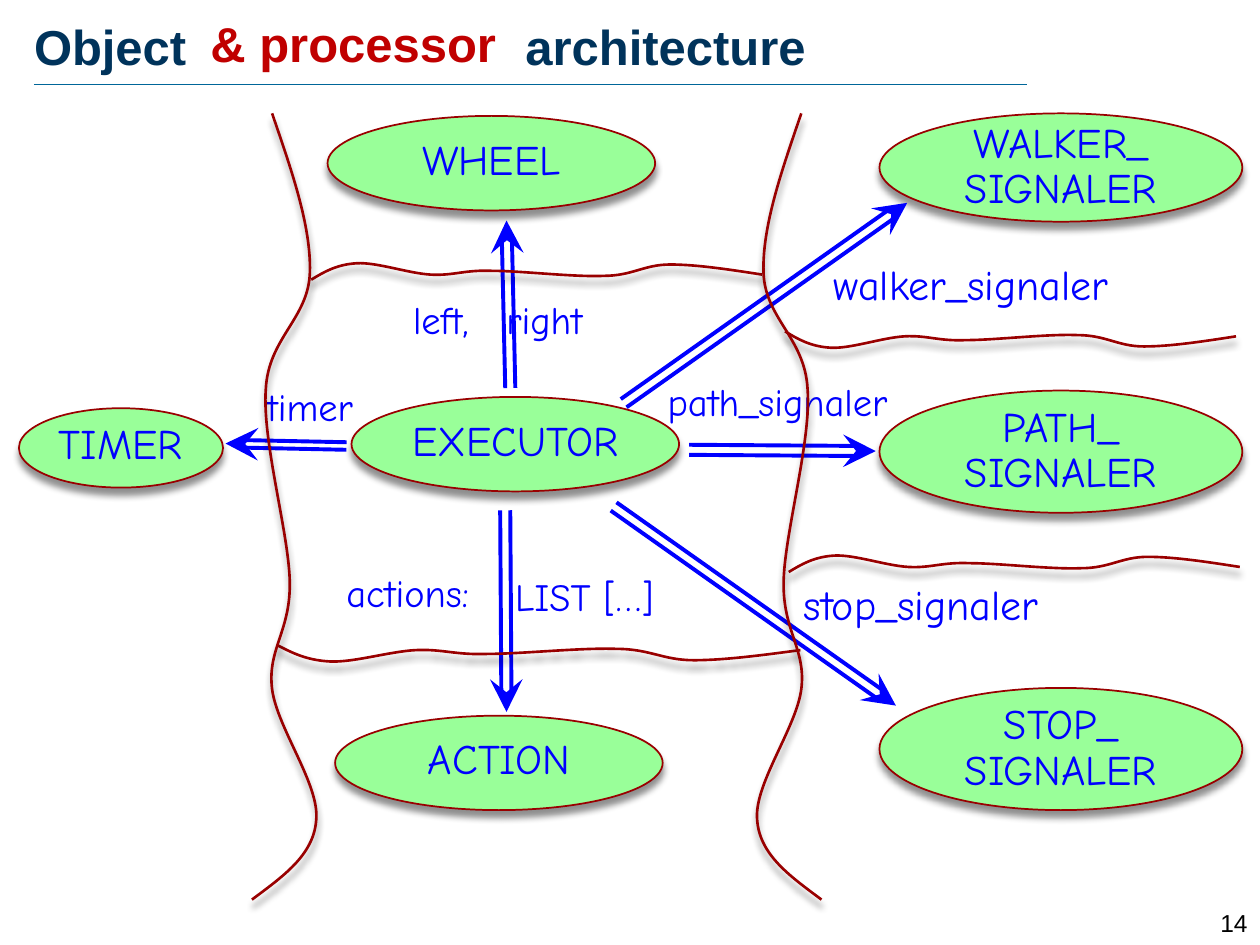
import math
from dataclasses import dataclass

import pptx
import pptx.dml.color
import pptx.enum.shapes
import pptx.enum.text
import pptx.oxml
import pptx.oxml.ns
import pptx.util
from pptx.util import Inches

BLUE, NAVY, RED = "0000FF", "00335B", "C00000"
GREEN, MAROON, BLACK = "99FF99", "990000", "000000"
HAND, SANS = "Comic Neue", "Arial"
NAMESPACE = 'xmlns:a="http://schemas.openxmlformats.org/drawingml/2006/main"'
ALIGN = pptx.enum.text.PP_ALIGN
ANCHOR = pptx.enum.text.MSO_ANCHOR
Point = tuple[float, float]


@dataclass
class Node:
    name: str
    left: float
    top: float
    width: float = 2.6
    height: float = 0.75
    spacing: float = 0.8


@dataclass
class Label:
    text: str
    left: float
    top: float
    width: float
    size: int = 22
    tab: float = 0


@dataclass
class Arrow:
    start: Point
    tip: Point
    half_gap: float = 0.04


NODES = [
    Node("EXECUTOR", 2.79, 3.15),
    Node("WHEEL", 2.6, 0.92),
    Node("ACTION", 2.66, 5.68),
    Node("TIMER", 0.15, 3.24, 1.62, 0.63),
    Node("WALKER_\nSIGNALER", 6.98, 0.9, 2.88, 0.86, 0.9),
    Node("PATH_\nSIGNALER", 6.98, 3.1, 2.88, 0.97, 0.9),
    Node("STOP_\nSIGNALER", 6.98, 5.46, 2.88, 0.97, 0.9),
]
ARROWS = [
    Arrow((4.95, 3.2), (7.2, 1.61)),
    Arrow((5.47, 3.57), (6.95, 3.58)),
    Arrow((4.87, 4.02), (7.11, 5.6)),
    Arrow((4.05, 3.08), (4.02, 1.75)),
    Arrow((4.01, 4.05), (4.02, 5.65)),
    Arrow((2.75, 3.54), (1.79, 3.52), 0.03),
]
LABELS = [
    Label("path_signaler", 5.2, 2.95, 2.33),
    Label("stop_signaler", 6.28, 4.54, 2.33, 24),
    Label("walker_signaler", 6.52, 2, 2.76, 24),
    Label("left,\tright", 3.18, 2.3, 2.28, tab=0.74),
    Label("LIST […]", 3.99, 4.5, 1.61),
    Label("actions:", 2.65, 4.47, 1.61),
    Label("timer", 2.02, 2.99, 1.03),
]
# Processor boundaries: a start point, then three Bezier points per segment
WAVE = [(0, 0), (0.1, 0.06), (0.2, 0.12), (0.36, 0.13), (0.52, 0.14), (0.77, 0.05),
        (0.95, 0.04), (1.13, 0.03), (1.22, 0.08), (1.44, 0.07), (1.67, 0.07),
        (2.08, 0.02), (2.32, 0.03), (2.55, 0.03), (2.64, 0.12), (2.85, 0.12),
        (3.06, 0.12), (3.32, 0.08), (3.58, 0.04)]
SIDE = [(6.52, 7.14), (6.28, 6.96), (6.03, 6.79), (6.01, 6.51), (5.98, 6.23),
        (6.32, 5.78), (6.36, 5.47), (6.4, 5.15), (6.21, 5.01), (6.22, 4.61),
        (6.23, 4.22), (6.44, 3.5), (6.41, 3.09), (6.39, 2.68), (6.07, 2.53),
        (6.06, 2.16), (6.05, 1.79), (6.21, 1.34), (6.36, 0.9)]
MIRROR_SUM = 8.52


def color(value: str) -> pptx.dml.color.RGBColor:
    return pptx.dml.color.RGBColor.from_string(value)


def set_line(shape, value: str, width: float) -> None:
    shape.line.color.rgb = color(value)
    shape.line.width = pptx.util.Pt(width)


def add_shadow(shape) -> None:
    shape.shadow.inherit = False
    effects = shape._element.spPr.find(pptx.oxml.ns.qn("a:effectLst"))
    effects.append(pptx.oxml.parse_xml(
        f'<a:outerShdw {NAMESPACE} blurRad="50800" dist="50800" dir="5400000">'
        '<a:srgbClr val="000000"><a:alpha val="43000"/></a:srgbClr></a:outerShdw>'))


def write(shape, text: str, size: int, value: str, name: str = HAND, bold: bool = False,
          align=ALIGN.LEFT, spacing: float = 1, tab: float = 0, **frame_format) -> None:
    frame = shape.text_frame
    for key, setting in {"word_wrap": True, **frame_format}.items():
        setattr(frame, key, setting)
    paragraph = frame.paragraphs[0]
    if tab:
        paragraph._p.get_or_add_pPr().append(pptx.oxml.parse_xml(
            f'<a:tabLst {NAMESPACE}><a:tab pos="{Inches(tab)}" algn="l"/></a:tabLst>'))
    paragraph.alignment, paragraph.line_spacing = align, spacing
    for index, line in enumerate(text.split("\n")):
        if index:
            paragraph.add_line_break()
        run = paragraph.add_run()
        run.text = line
        for key, setting in {"size": pptx.util.Pt(size), "name": name, "bold": bold}.items():
            setattr(run.font, key, setting)
        run.font.color.rgb = color(value)


def add_text(slide, left: float, top: float, width: float, height: float, *content, **format):
    box = slide.shapes.add_textbox(*map(Inches, (left, top, width, height)))
    write(box, *content, **format)


def add_node(slide, node: Node) -> None:
    shape = slide.shapes.add_shape(
        pptx.enum.shapes.MSO_SHAPE.OVAL,
        *map(Inches, (node.left, node.top, node.width, node.height)))
    shape.fill.solid()
    shape.fill.fore_color.rgb = color(GREEN)
    set_line(shape, MAROON, 1)
    add_shadow(shape)
    write(shape, node.name, 24, BLUE, align=ALIGN.CENTER, spacing=node.spacing,
          vertical_anchor=ANCHOR.MIDDLE, margin_left=0, margin_right=0)


def add_line(shapes, start: Point, end: Point, value: str, width: float, head: bool = False):
    connector = shapes.add_connector(
        pptx.enum.shapes.MSO_CONNECTOR.STRAIGHT, *map(Inches, (*start, *end)))
    set_line(connector, value, width)
    if head:
        connector.line._get_or_add_ln().append(pptx.oxml.parse_xml(
            f'<a:tailEnd {NAMESPACE} type="stealth" w="lg" len="lg"/>'))
    connector._element.spPr.append(pptx.oxml.parse_xml(f"<a:effectLst {NAMESPACE}/>"))


def add_arrow(slide, arrow: Arrow) -> None:
    """Draw two parallel shafts that run into one arrowhead."""
    (x, y), (tip_x, tip_y) = arrow.start, arrow.tip
    length = math.dist(arrow.start, arrow.tip)
    along_x, along_y = (tip_x - x) / length, (tip_y - y) / length
    shapes = slide.shapes.add_group_shape().shapes

    def place(distance: float, offset: float = 0) -> Point:
        return (x + along_x * distance - along_y * offset,
                y + along_y * distance + along_x * offset)

    add_line(shapes, place(length - 0.2), arrow.tip, BLUE, 3.75, head=True)
    for offset in (-arrow.half_gap, arrow.half_gap):
        add_line(shapes, place(0, offset), place(length - 0.15, offset), BLUE, 2.25)


def add_curve(slide, points: list[Point]) -> None:
    start, *rest = [(Inches(x), Inches(y)) for x, y in points]
    builder = slide.shapes.build_freeform(*start)
    builder.add_line_segments(rest, close=False)
    shape = builder.convert_to_shape()
    # Join every three straight segments into one Bezier segment
    segments = list(shape._element.iter(pptx.oxml.ns.qn("a:lnTo")))
    for index in range(0, len(segments), 3):
        bezier = pptx.oxml.parse_xml(f"<a:cubicBezTo {NAMESPACE}/>")
        segments[index].addprevious(bezier)
        for segment in segments[index:index + 3]:
            bezier.append(segment[0])
            segment.getparent().remove(segment)
    shape.fill.background()
    set_line(shape, MAROON, 1.5)
    add_shadow(shape)


def add_wave(slide, left: float, top: float, x_scale: float = 1, y_scale: float = 1) -> None:
    add_curve(slide, [(left + x * x_scale, top + y * y_scale) for x, y in WAVE])


def main() -> None:
    presentation = pptx.Presentation()
    presentation.slide_width, presentation.slide_height = Inches(10), Inches(7.5)
    slide = presentation.slides.add_slide(presentation.slide_layouts[5])

    # Title, rule and page number
    title = slide.shapes.title
    title.left, title.top, title.width, title.height = map(Inches, (0.27, 0.09, 9.45, 0.56))
    heading = {"name": SANS, "bold": True, "margin_left": 0, "margin_right": 0,
               "margin_top": Inches(0.04), "margin_bottom": Inches(0.04)}
    write(title, "Object\tarchitecture", 28, NAVY, tab=3.9, vertical_anchor=ANCHOR.TOP,
          auto_size=pptx.enum.text.MSO_AUTO_SIZE.NONE, **heading)
    add_text(slide, 1.67, 0.07, 2.91, 0.56, "& processor", 28, RED, **heading)
    add_line(slide.shapes, (0.27, 0.67), (8.15, 0.67), "006699", 0.25)
    add_text(slide, 9.45, 7.16, 0.55, 0.24, "14", 14, BLACK, SANS, align=ALIGN.RIGHT)

    # Objects and their references
    for node in NODES:
        add_node(slide, node)
    for arrow in ARROWS:
        add_arrow(slide, arrow)
    for label in LABELS:
        add_text(slide, label.left, label.top, label.width, 0.47,
                 label.text, label.size, BLUE, tab=label.tab)

    # Processor boundaries
    add_wave(slide, 6.23, 2.63)
    add_wave(slide, 6.26, 4.54, y_scale=-1)
    add_wave(slide, 2.47, 2.22, y_scale=-1)
    add_wave(slide, 2.2, 5.12, x_scale=1.16)
    add_curve(slide, SIDE)
    add_curve(slide, [(MIRROR_SUM - x, y) for x, y in SIDE])

    presentation.save("out.pptx")


if __name__ == "__main__":
    main()
